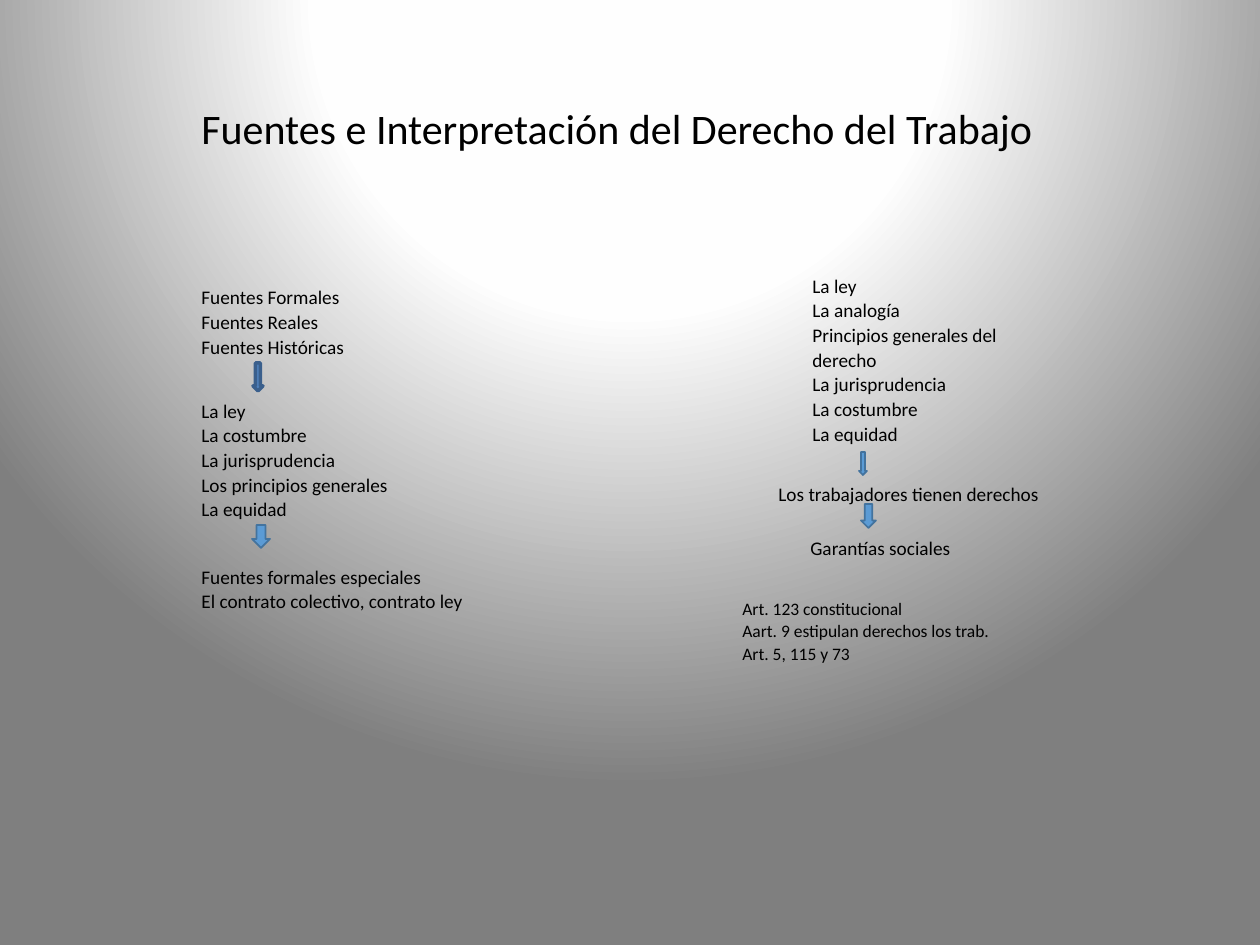
from pptx import Presentation
from pptx.dml.color import RGBColor
from pptx.enum.shapes import MSO_SHAPE
from pptx.oxml import parse_xml
from pptx.oxml.ns import nsdecls
from pptx.util import Emu, Pt

DOWN_ARROW = MSO_SHAPE.DOWN_ARROW
EMU_PER_PX = 914400 / 126
FONT = "Calibri"
COLORS = {
    "text": "000000",
    "blue": "5B9BD5",
    "blue_line": "43739E",
    "dark_blue": "4F81BD",
    "dark_blue_line": "3A5F8C",
}
BACKGROUND_STOPS = [(0, "FFFFFF"), (40, "FEFEFE"), (100, "7F7F7F")]

TITLE = "Fuentes e Interpretación del Derecho del Trabajo"
# (left, top, width, height), lines
SOURCES = [
    ((189, 278, 180, 86), ["Fuentes Formales", "Fuentes Reales", "Fuentes Históricas"]),
    ((189, 391, 215, 147), ["La ley", "La costumbre", "La jurisprudencia",
                            "Los principios generales", "La equidad"]),
    ((189, 557, 294, 82), ["Fuentes formales especiales",
                           "El contrato colectivo, contrato ley"]),
]
INTERPRETATION = [
    ((800, 266, 213, 197), ["La ley", "La analogía", "Principios generales del derecho",
                            "La jurisprudencia", "La costumbre", "La equidad"]),
    ((766, 475, 305, 37), ["Los trabajadores tienen derechos"]),
    ((798, 529, 227, 50), ["Garantías sociales"]),
]
ARTICLES = ((730, 590, 309, 89), ["Art. 123 constitucional",
                                  "Aart. 9 estipulan derechos los trab.",
                                  "Art. 5, 115 y 73"])
ARROWS = [(859, 452, 8, 23), (252, 525, 18, 23), (861, 504, 15, 24)]


def px(*lengths):
    """Turn px lengths into EMU."""
    return [Emu(round(length * EMU_PER_PX)) for length in lengths]


class SlideBuilder:
    def __init__(self, presentation):
        self.slide = presentation.slides.add_slide(presentation.slide_layouts[6])

    def radial_background(self, stops):
        """Fill the background with circles centred above the slide."""
        stop_xml = "".join(
            f'<a:gs pos="{position * 1000}"><a:srgbClr val="{color}"/></a:gs>'
            for position, color in stops
        )
        background = parse_xml(
            f'<p:bg {nsdecls("p", "a")}><p:bgPr><a:gradFill rotWithShape="1">'
            f'<a:gsLst>{stop_xml}</a:gsLst><a:path path="circle">'
            '<a:fillToRect l="50000" t="-80000" r="50000" b="180000"/></a:path>'
            '</a:gradFill><a:effectLst/></p:bgPr></p:bg>'
        )
        self.slide.element.cSld.insert(0, background)

    def text(self, box, lines, size=11, spacing=1.07):
        text_frame = self.slide.shapes.add_textbox(*px(*box)).text_frame
        text_frame.word_wrap = True
        text_frame.text = "\n".join(lines)
        for paragraph in text_frame.paragraphs:
            paragraph.line_spacing = spacing
            font = paragraph.runs[0].font
            font.name = FONT
            font.size = Pt(size)
            font.color.rgb = RGBColor.from_string(COLORS["text"])

    def arrow(self, box, color="blue", line_width=1):
        shape = self.slide.shapes.add_shape(DOWN_ARROW, *px(*box))
        shape.shadow.inherit = False
        shape.fill.solid()
        shape.fill.fore_color.rgb = RGBColor.from_string(COLORS[color])
        shape.line.color.rgb = RGBColor.from_string(COLORS[color + "_line"])
        shape.line.width = Pt(line_width)


def main():
    presentation = Presentation()
    presentation.slide_width, presentation.slide_height = px(1260, 945)
    builder = SlideBuilder(presentation)
    builder.radial_background(BACKGROUND_STOPS)
    builder.text((189, 96, 897, 63), [TITLE], size=24, spacing=1.0)
    for box, lines in SOURCES + INTERPRETATION:
        builder.text(box, lines)
    builder.text(*ARTICLES, size=10)
    builder.arrow((253, 363, 10, 28), color="dark_blue", line_width=2)
    for box in ARROWS:
        builder.arrow(box)
    presentation.save("out.pptx")


if __name__ == "__main__":
    main()
